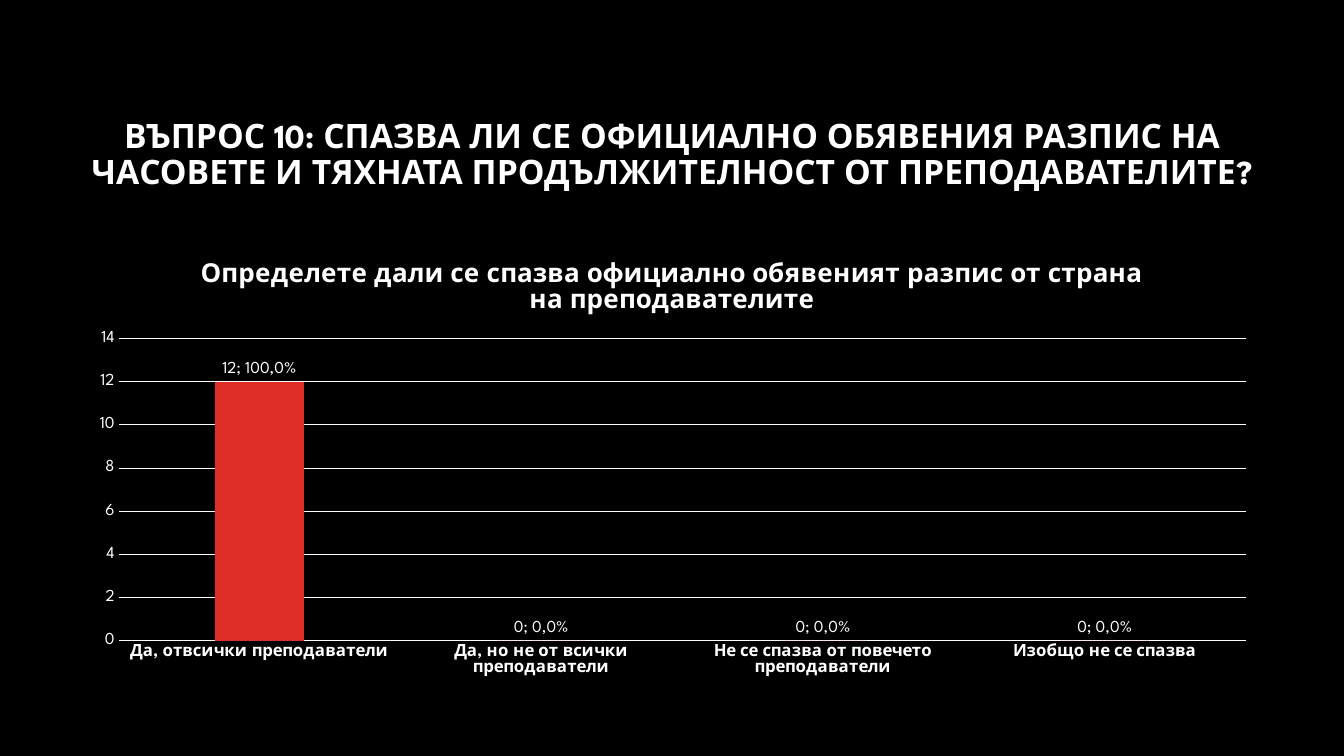
import pptx
import pptx.chart.data
import pptx.dml.color
import pptx.enum.chart
import pptx.enum.text
import pptx.util
from lxml import etree

Inches = pptx.util.Inches
CHART = pptx.enum.chart
TEXT = pptx.enum.text

HEADING = "ВЪПРОС 10: СПАЗВА ЛИ СЕ ОФИЦИАЛНО ОБЯВЕНИЯ РАЗПИС НА ЧАСОВЕТЕ И ТЯХНАТА ПРОДЪЛЖИТЕЛНОСТ ОТ ПРЕПОДАВАТЕЛИТЕ?"
CHART_TITLE = "Определете дали се спазва официално обявеният разпис от страна на преподавателите"
ANSWERS = {
    "Да, отвсички преподаватели": (12, "12; 100,0%"),
    "Да, но не от всички преподаватели": (0, "0; 0,0%"),
    "Не се спазва от повечето преподаватели": (0, "0; 0,0%"),
    "Изобщо не се спазва": (0, "0; 0,0%"),
}


def color(value):
    return pptx.dml.color.RGBColor.from_string(value)


def set_values(target, values):
    for name, value in values.items():
        setattr(target, name, value)


class SurveySlide:
    FONT = "League Spartan"
    BACKGROUND = "000000"
    FOREGROUND = "FFFFFF"
    BAR = "DF2E28"

    def __init__(self, presentation):
        self.slide = presentation.slides.add_slide(presentation.slide_layouts[6])
        fill = self.slide.background.fill
        fill.solid()
        fill.fore_color.rgb = color(self.BACKGROUND)

    def style_font(self, font, size, bold=False):
        set_values(font, {"name": self.FONT, "size": pptx.util.Pt(size), "bold": bold})
        font.color.rgb = color(self.FOREGROUND)

    def style_line(self, line):
        line.color.rgb = color(self.FOREGROUND)
        line.width = pptx.util.Pt(0.75)

    def add_heading(self, text, left, top, width, height):
        box = self.slide.shapes.add_textbox(*map(Inches, (left, top, width, height)))
        set_values(box.text_frame, {"word_wrap": True, "vertical_anchor": TEXT.MSO_ANCHOR.MIDDLE})
        paragraph = box.text_frame.paragraphs[0]
        set_values(paragraph, {"alignment": TEXT.PP_ALIGN.CENTER, "line_spacing": 0.9})
        run = paragraph.add_run()
        run.text = text
        self.style_font(run.font, 24, True)

    def add_column_chart(self, title, answers, left, top, width, height):
        data = pptx.chart.data.CategoryChartData()
        data.categories = list(answers)
        data.add_series(title, [count for count, label in answers.values()])
        chart = self.slide.shapes.add_chart(
            CHART.XL_CHART_TYPE.COLUMN_CLUSTERED,
            *map(Inches, (left, top, width, height)), data).chart
        self.style_font(chart.font, 10)
        set_values(chart, {"has_legend": False, "has_title": True})

        # Chart title
        chart.chart_title.include_in_layout = False
        paragraph = chart.chart_title.text_frame.paragraphs[0]
        run = paragraph.add_run()
        run.text = title
        self.style_font(run.font, 18.6, True)

        self.style_axes(chart)
        self.style_columns(chart.plots[0], [label for count, label in answers.values()])
        self.place_plot(chart, x=0.036, y=0.218, w=0.945, h=0.682)

    def style_axes(self, chart):
        no_ticks = {"major_tick_mark": CHART.XL_TICK_MARK.NONE,
                    "minor_tick_mark": CHART.XL_TICK_MARK.NONE}
        for axis, bold in ((chart.category_axis, True), (chart.value_axis, False)):
            set_values(axis, no_ticks)
            self.style_font(axis.tick_labels.font, 12, bold)
        self.style_line(chart.category_axis.format.line)
        value_axis = chart.value_axis
        set_values(value_axis, {"minimum_scale": 0, "maximum_scale": 14, "major_unit": 2})
        value_axis.format.line.fill.background()
        self.style_line(value_axis.major_gridlines.format.line)

    def style_columns(self, plot, labels):
        set_values(plot, {"gap_width": 219, "overlap": -27, "vary_by_categories": False})
        series = plot.series[0]
        series.format.fill.solid()
        series.format.fill.fore_color.rgb = color(self.BAR)
        outside = CHART.XL_LABEL_POSITION.OUTSIDE_END
        set_values(series.data_labels, {"show_value": True, "position": outside})
        self.style_font(series.data_labels.font, 12)
        for index, text in enumerate(labels):
            label = series.points[index].data_label
            run = label.text_frame.paragraphs[0].add_run()
            run.text = text
            self.style_font(run.font, 12)
            label.position = outside

    def place_plot(self, chart, **fractions):
        # Manual inner layout of the plot area
        namespace = "{http://schemas.openxmlformats.org/drawingml/2006/chart}"
        plot_area = chart.plots[0]._element.getparent()
        for old_layout in plot_area.findall(namespace + "layout"):
            plot_area.remove(old_layout)
        layout = etree.Element(namespace + "layout")
        plot_area.insert(0, layout)
        manual = etree.SubElement(layout, namespace + "manualLayout")
        settings = {"layoutTarget": "inner", "xMode": "edge", "yMode": "edge", **fractions}
        for name, value in settings.items():
            etree.SubElement(manual, namespace + name, val=str(value))


def main():
    presentation = pptx.Presentation()
    set_values(presentation, {"slide_width": Inches(13.33), "slide_height": Inches(7.5)})
    survey = SurveySlide(presentation)
    survey.add_heading(HEADING, 0.75, 0.84, 11.83, 1.41)
    survey.add_column_chart(CHART_TITLE, ANSWERS, 0.75, 2.4, 11.83, 4.4)
    presentation.save("out.pptx")


if __name__ == "__main__":
    main()
